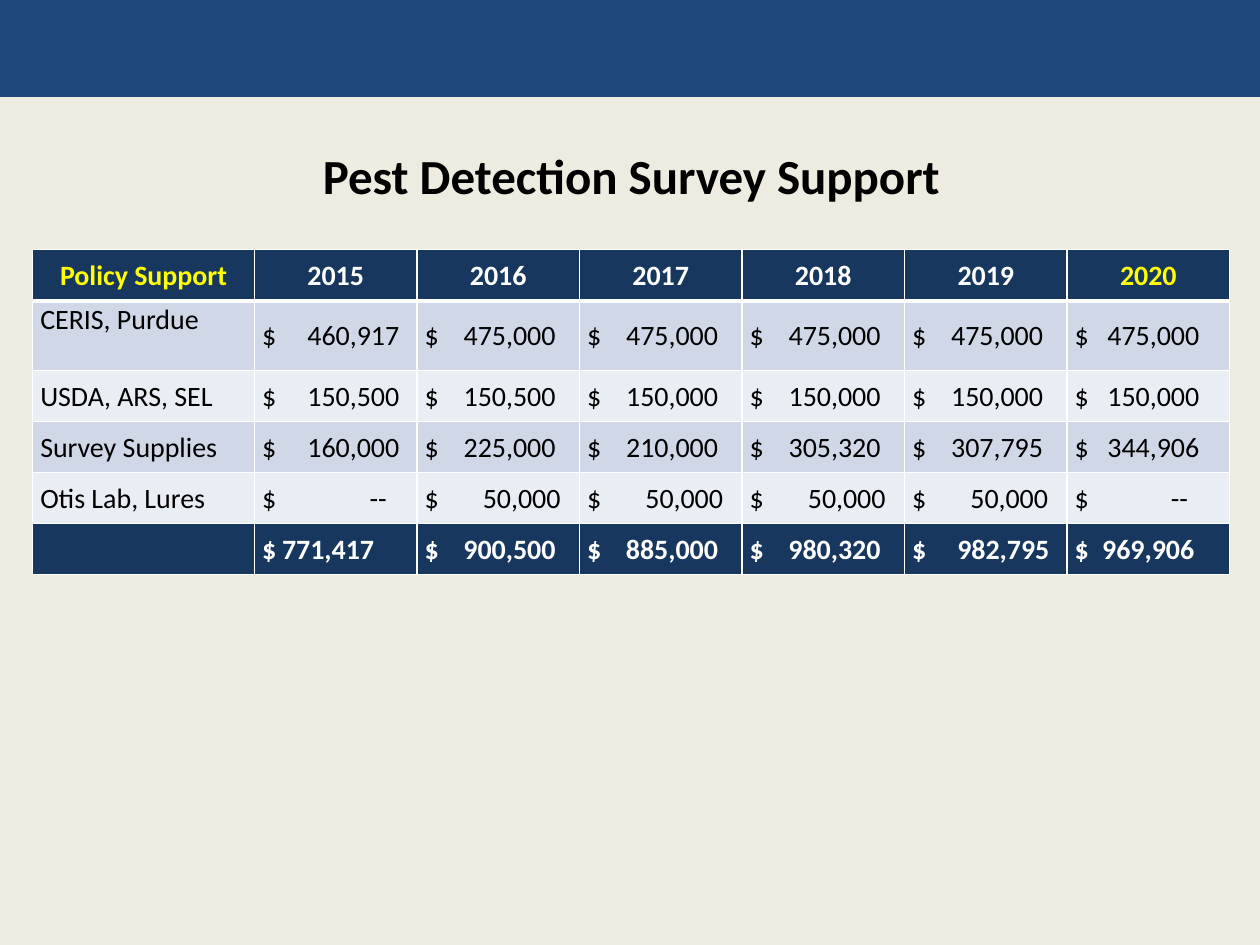
import pptx
import pptx.util
import pptx.dml.color
import pptx.enum.shapes
import pptx.enum.text
import pptx.oxml
import pptx.oxml.ns

Inches, Pt = pptx.util.Inches, pptx.util.Pt
RGB = pptx.dml.color.RGBColor
ALIGN = pptx.enum.text.PP_ALIGN
ANCHOR = pptx.enum.text.MSO_ANCHOR

SAND = RGB(0xEE, 0xEC, 0xE1)
BLUE = RGB(0x1F, 0x49, 0x7D)
NAVY = RGB(0x17, 0x37, 0x5E)
BANDS = (RGB(0xD0, 0xD8, 0xE8), RGB(0xE9, 0xED, 0xF4))
YELLOW = RGB(0xFF, 0xFF, 0)
WHITE = RGB(0xFF, 0xFF, 0xFF)
BLACK = RGB(0, 0, 0)

TITLE = "Pest Detection Survey Support"
HEAD = ["Policy Support", "2015", "2016", "2017", "2018", "2019", "2020"]
ROWS = [
    ["CERIS, Purdue", "460,917", "475,000", "475,000", "475,000", "475,000", "475,000"],
    ["USDA, ARS, SEL", "150,500", "150,500", "150,000", "150,000", "150,000", "150,000"],
    ["Survey Supplies", "160,000", "225,000", "210,000", "305,320", "307,795", "344,906"],
    ["Otis Lab, Lures", "--", "50,000", "50,000", "50,000", "50,000", "--"],
    ["", "771,417", "900,500", "885,000", "980,320", "982,795", "969,906"],
]
# Right edge of the amounts in each year column, in inches
ENDS = [1.09, 1.04, 1.04, 1.04, 1.04, 0.99]
LAB_ENDS = [0.99, 1.08, 1.08, 1.08, 1.08, 0.9]
SUM_ENDS = [0.89, 1.04, 1.04, 1.04, 1.09, 0.95]
TABS = [ENDS, ENDS, ENDS, LAB_ENDS, SUM_ENDS]

WIDTHS = [1.76] + [1.29] * 6
HEIGHTS = [0.41, 0.55] + [0.405] * 4


def write(frame, text, size=16, color=BLACK, bold=False, align=ALIGN.LEFT, tab=None):
    para = frame.paragraphs[0]
    para.alignment = align
    if tab:
        props = para._p.get_or_add_pPr()
        stops = pptx.oxml.parse_xml(
            f'<a:tabLst {pptx.oxml.ns.nsdecls("a")}>'
            f'<a:tab pos="{Inches(tab)}" algn="r"/></a:tabLst>')
        props.append(stops)
    para.font.size = Pt(size)
    if text:
        run = para.add_run()
        run.text = text
        font = run.font
        font.name, font.size, font.bold = "Calibri", Pt(size), bold
        font.color.rgb = color


def edge(cell, **sides):
    """Draw white borders; sides maps L, R, T, B to widths in points."""
    props = cell._tc.get_or_add_tcPr()
    for side, width in sides.items():
        props.append(pptx.oxml.parse_xml(
            f'<a:ln{side} {pptx.oxml.ns.nsdecls("a")} w="{Pt(width)}">'
            f'<a:solidFill><a:srgbClr val="{WHITE}"/></a:solidFill></a:ln{side}>'))


def style(cell, fill, left, row):
    edge(cell, L=1, R=1, T=3 if row == 1 else 1, B=3 if row == 0 else 1)
    cell.fill.solid()
    cell.fill.fore_color.rgb = fill
    cell.margin_left = Inches(left)
    cell.margin_right = cell.margin_top = Inches(0.01)
    cell.margin_bottom = 0
    cell.vertical_anchor = ANCHOR.MIDDLE


def build(slide):
    grid = slide.shapes.add_table(
        len(HEIGHTS), len(WIDTHS), Inches(0.26), Inches(1.98),
        Inches(sum(WIDTHS)), Inches(sum(HEIGHTS))).table
    for col, width in zip(grid.columns, WIDTHS):
        col.width = Inches(width)
    for row, height in zip(grid.rows, HEIGHTS):
        row.height = Inches(height)

    for c, text in enumerate(HEAD):
        cell = grid.cell(0, c)
        style(cell, NAVY, 0.01, 0)
        color = YELLOW if c in (0, len(HEAD) - 1) else WHITE
        write(cell.text_frame, text, color=color, bold=True, align=ALIGN.CENTER)

    for r, (row, tabs) in enumerate(zip(ROWS, TABS), 1):
        total = r == len(ROWS)
        for c, text in enumerate(row):
            cell = grid.cell(r, c)
            style(cell, NAVY if total else BANDS[(r - 1) % 2], 0.06, r)
            write(cell.text_frame, f"$\t{text}" if c else text,
                  color=WHITE if total else BLACK, bold=total,
                  tab=tabs[c - 1] if c else None)
    grid.cell(1, 0).vertical_anchor = ANCHOR.TOP


def main():
    deck = pptx.Presentation()
    deck.slide_width, deck.slide_height = Inches(10), Inches(7.5)
    slide = deck.slides.add_slide(deck.slide_layouts[6])
    slide.background.fill.solid()
    slide.background.fill.fore_color.rgb = SAND

    bar = slide.shapes.add_shape(
        pptx.enum.shapes.MSO_SHAPE.RECTANGLE, 0, 0, deck.slide_width, Inches(0.77))
    bar.shadow.inherit = False
    bar.fill.solid()
    bar.fill.fore_color.rgb = BLUE
    bar.line.fill.background()

    box = slide.shapes.add_textbox(Inches(0.61), Inches(1), Inches(8.8), Inches(0.78))
    box.text_frame.word_wrap = True
    box.text_frame.vertical_anchor = ANCHOR.MIDDLE
    write(box.text_frame, TITLE, size=28, bold=True, align=ALIGN.CENTER)

    build(slide)
    deck.save("out.pptx")


if __name__ == "__main__":
    main()
